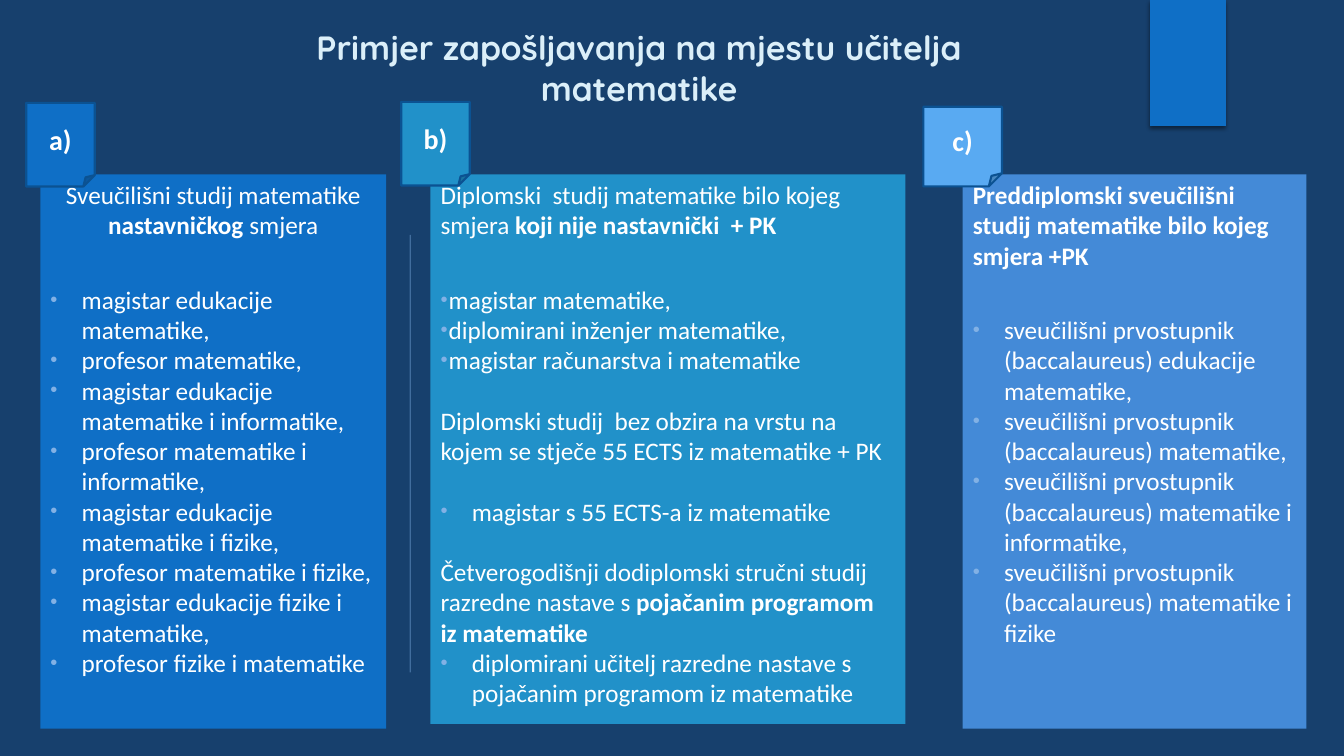
from lxml import etree
from pptx import Presentation
from pptx import util as u
from pptx.dml.color import RGBColor
from pptx.enum import shapes, text
from pptx.oxml import ns, parse_xml

WIDTH, HEIGHT = u.Inches(13.33), u.Inches(7.5)
NAVY = RGBColor(0x17, 0x40, 0x6D)
BLUE = RGBColor(0x0F, 0x6F, 0xC6)
TEAL = RGBColor(0x21, 0x91, 0xC9)
SOFT_BLUE = RGBColor(0x44, 0x8A, 0xD7)
SKY = RGBColor(0x59, 0xAA, 0xF2)
OUTLINE = RGBColor(0x0B, 0x52, 0x92)
PALE = RGBColor(0x82, 0xB1, 0xE5)
ICE = RGBColor(0xDB, 0xEF, 0xF9)
WHITE = RGBColor(0xFF, 0xFF, 0xFF)

LINE_HEIGHT = 21.6  # points
HEADING_GAP = LINE_HEIGHT + 10
INDENT = 0.31  # inches

# Boxes are left, top, width, height in hundredths of the slide.
TITLE_BOX = (17.4, 2.93, 60.3, 16.4)
BAR_BOX = (85.58, 0, 5.63, 16.67)


def item(words, gap=0, margin=INDENT):
    return dict(parts=[(words, False)], gap=gap, margin=margin)


def plain(*parts, gap=0, align=text.PP_ALIGN.LEFT):
    return dict(parts=parts, gap=gap, align=align)


PANELS = [
    dict(box=(3, 23.07, 25.73, 73.33), fill=BLUE, label="a)", tag_fill=BLUE,
         tag=(-1.05, -9.47, 5.1, 11.07), paragraphs=[
             plain(("Sveučilišni studij matematike ", False), ("nastavničkog ", True),
                   ("smjera", False), align=text.PP_ALIGN.CENTER),
             item("magistar edukacije matematike,", HEADING_GAP),
             item("profesor matematike,"),
             item("magistar edukacije matematike i informatike,"),
             item("profesor matematike i informatike,"),
             item("magistar edukacije matematike i fizike,"),
             item("profesor matematike i fizike,"),
             item("magistar edukacije fizike i matematike,"),
             item("profesor fizike i matematike")]),
    dict(box=(32.03, 23.07, 35.33, 72.67), fill=TEAL, label="b)", tag_fill=TEAL,
         tag=(-2.18, -9.6, 5.1, 11.07), paragraphs=[
             plain(("Diplomski  studij matematike bilo kojeg smjera ", False),
                   ("koji nije nastavnički  + PK", True)),
             item("magistar matematike,", HEADING_GAP, margin=0.08),
             item("diplomirani inženjer matematike,", margin=0.08),
             item("magistar računarstva i matematike", margin=0.08),
             plain(("Diplomski studij  bez obzira na vrstu na kojem se stječe "
                    "55 ECTS iz matematike + PK", False), gap=LINE_HEIGHT),
             item("magistar s 55 ECTS-a iz matematike", LINE_HEIGHT),
             plain(("Četverogodišnji dodiplomski stručni studij razredne nastave s ", False),
                   ("pojačanim programom iz matematike", True), gap=LINE_HEIGHT),
             item("diplomirani učitelj razredne nastave s pojačanim programom iz matematike")]),
    dict(box=(71.63, 23.07, 25.58, 73.33), fill=SOFT_BLUE, label="c)", tag_fill=SKY,
         tag=(-2.93, -8.94, 5.85, 10.53), paragraphs=[
             plain(("Preddiplomski sveučilišni studij matematike bilo kojeg smjera +PK", True)),
             item("sveučilišni prvostupnik (baccalaureus) edukacije matematike,", HEADING_GAP),
             item("sveučilišni prvostupnik (baccalaureus) matematike,"),
             item("sveučilišni prvostupnik (baccalaureus) matematike i informatike,"),
             item("sveučilišni prvostupnik (baccalaureus) matematike i fizike")]),
]


def to_lengths(box):
    left, top, width, height = box
    return [round(share * side / 100) for share, side in
            ((left, WIDTH), (top, HEIGHT), (width, WIDTH), (height, HEIGHT))]


def move(shape, box):
    shape.left, shape.top, shape.width, shape.height = to_lengths(box)


def add_xml(parent, xml):
    parent.append(parse_xml(xml.replace(">", f" {ns.nsdecls('a')}>", 1)
                            if not xml.split(">")[0].endswith("/")
                            else xml.replace("/>", f" {ns.nsdecls('a')}/>", 1)))


def set_bullet(paragraph, margin=None):
    """Give the paragraph a hanging bullet, or none when there is no margin."""
    properties = paragraph._p.get_or_add_pPr()
    properties.set("marL", str(u.Inches(margin or 0)))
    properties.set("indent", str(-u.Inches(INDENT) if margin else 0))
    if margin is None:
        add_xml(properties, "<a:buNone/>")
        return
    add_xml(properties, f'<a:buClr><a:srgbClr val="{PALE}"/></a:buClr>')
    add_xml(properties, '<a:buSzPct val="80000"/>')
    add_xml(properties, '<a:buFont typeface="Arial"/>')
    add_xml(properties, '<a:buChar char="•"/>')


def write(paragraph, parts, size=18, font="Calibri", color=WHITE, gap=0,
          align=text.PP_ALIGN.LEFT, margin=None, line_height=None):
    set_bullet(paragraph, margin)
    paragraph.alignment = align
    paragraph.space_before = u.Pt(gap)
    paragraph.space_after = u.Pt(0)
    if line_height:
        paragraph.line_spacing = u.Pt(line_height)
    for words, bold in parts:
        run = paragraph.add_run()
        run.text = words
        run.font.size = u.Pt(size)
        run.font.name = font
        run.font.bold = bold
        run.font.color.rgb = color


def prepare_frame(shape, anchor):
    frame = shape.text_frame
    frame.word_wrap = True
    frame.auto_size = text.MSO_AUTO_SIZE.NONE
    frame.vertical_anchor = anchor
    return frame


def add_filled(slide, preset, box, color):
    shape = slide.shapes.add_shape(preset, *to_lengths(box))
    shape.shadow.inherit = False
    shape.fill.solid()
    shape.fill.fore_color.rgb = color
    return shape


def build_title(slide, box):
    title = slide.shapes.title
    move(title, box)
    frame = prepare_frame(title, text.MSO_ANCHOR.TOP)
    write(frame.paragraphs[0], [("Primjer zapošljavanja na mjestu učitelja matematike", True)],
          size=24, font="Quicksand", color=ICE, align=text.PP_ALIGN.CENTER)


def build_decoration(slide, box):
    """Draw the corner bar in its box and the thin rule beside the middle panel."""
    bar = add_filled(slide, shapes.MSO_SHAPE.RECTANGLE, box, BLUE)
    bar.line.fill.background()
    effects = bar._element.spPr.find(ns.qn("a:effectLst"))
    add_xml(effects, '<a:outerShdw blurRad="38100" dist="25400" dir="5400000" rotWithShape="0">'
                     '<a:srgbClr val="000000"><a:alpha val="45000"/></a:srgbClr></a:outerShdw>')
    left, top, _, height = to_lengths((30.53, 31.07, 0, 57.86))
    rule = slide.shapes.add_connector(shapes.MSO_CONNECTOR.STRAIGHT, left, top, left, top + height)
    rule.line.color.rgb = PALE
    rule.line.width = u.Pt(1)
    color = rule._element.spPr.find(".//" + ns.qn("a:srgbClr"))
    etree.SubElement(color, ns.qn("a:alpha")).set("val", "40000")
    etree.SubElement(rule._element.spPr, ns.qn("a:effectLst"))


def build_panel(slide, body, box, fill, label, tag_fill, tag, paragraphs):
    """Fill a body placeholder and pin its lettered tag at an offset from the box."""
    move(body, box)
    body.fill.solid()
    body.fill.fore_color.rgb = fill
    frame = prepare_frame(body, text.MSO_ANCHOR.TOP)
    for index, content in enumerate(paragraphs):
        paragraph = frame.add_paragraph() if index else frame.paragraphs[0]
        write(paragraph, line_height=LINE_HEIGHT, **content)

    tag_box = (box[0] + tag[0], box[1] + tag[1], tag[2], tag[3])
    note = add_filled(slide, shapes.MSO_SHAPE.FOLDED_CORNER, tag_box, tag_fill)
    note.line.color.rgb = OUTLINE
    note.line.width = u.Pt(1.5)
    write(prepare_frame(note, text.MSO_ANCHOR.MIDDLE).paragraphs[0], [(label, True)],
          size=20, align=text.PP_ALIGN.CENTER)


def main():
    presentation = Presentation()
    presentation.slide_width, presentation.slide_height = WIDTH, HEIGHT
    slide = presentation.slides.add_slide(presentation.slide_layouts.get_by_name("Comparison"))
    slide.background.fill.solid()
    slide.background.fill.fore_color.rgb = NAVY
    bodies = [shape for shape in slide.placeholders if shape.placeholder_format.idx > 0]
    spare = bodies.pop()
    spare._element.getparent().remove(spare._element)
    build_title(slide, TITLE_BOX)
    build_decoration(slide, BAR_BOX)
    for body, panel in zip(bodies, PANELS):
        build_panel(slide, body, **panel)
    presentation.save("out.pptx")


if __name__ == "__main__":
    main()
